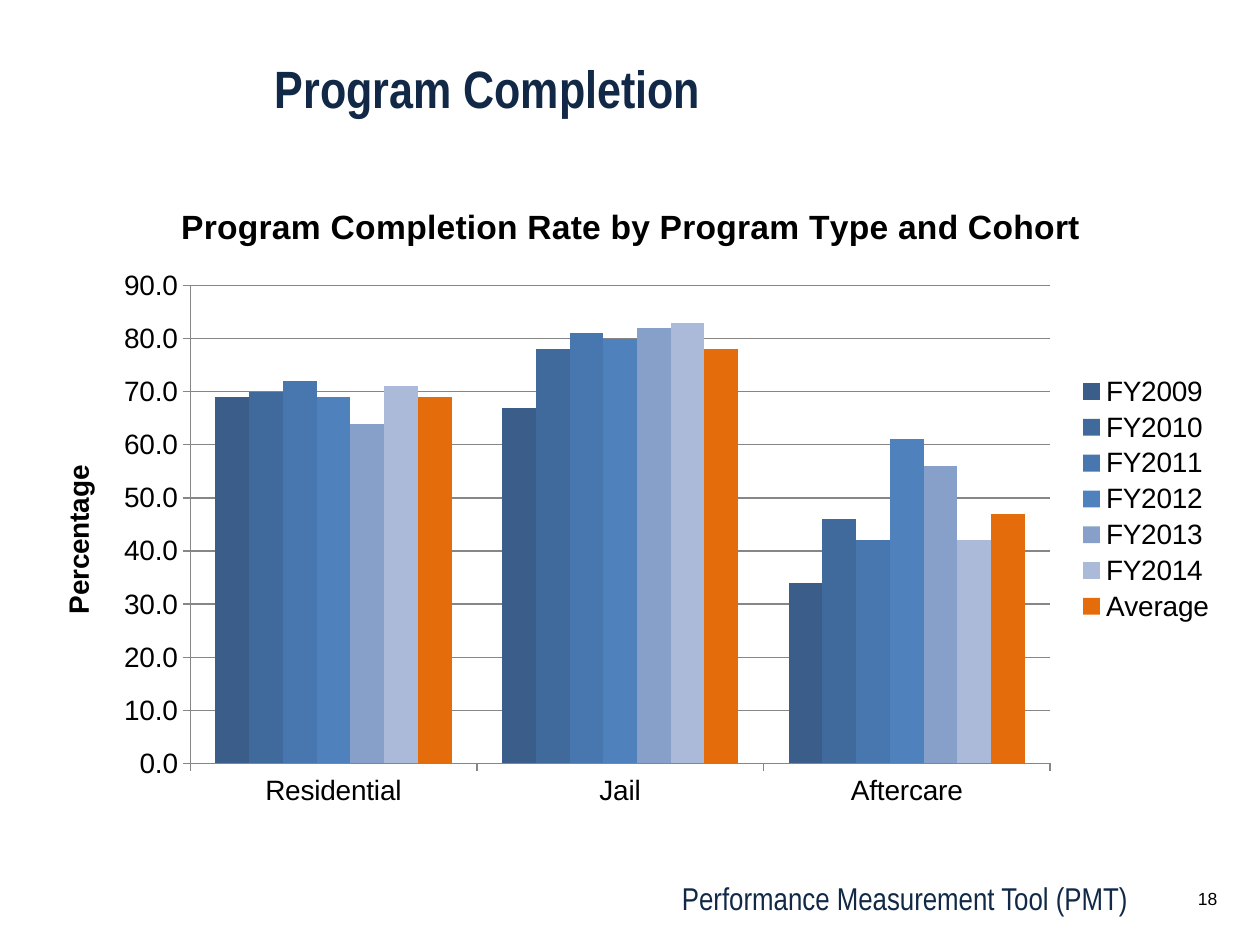
from dataclasses import dataclass
from typing import Optional

from lxml.etree import SubElement
from pptx import Presentation
from pptx.chart.data import CategoryChartData
from pptx.dml.color import RGBColor
from pptx.enum.chart import XL_CHART_TYPE as ChartType, XL_LEGEND_POSITION as LegendPos
from pptx.enum.chart import XL_TICK_MARK as Tick
from pptx.enum.text import MSO_ANCHOR as Anchor, PP_ALIGN as Align
from pptx.oxml import parse_xml
from pptx.oxml.ns import nsdecls, qn
from pptx.util import Inches, Pt

NAVY = RGBColor(0x11, 0x29, 0x47)
BLACK = RGBColor(0, 0, 0)
GRAY = RGBColor(0x86, 0x86, 0x86)
COLUMNS, ROWS = 100, 75
WIDTH, HEIGHT = Inches(10), Inches(7.5)


@dataclass(frozen=True)
class Area:
    column: float
    row: float
    columns: float
    rows: float

    def place(self) -> tuple[int, int, int, int]:
        across, down = WIDTH / COLUMNS, HEIGHT / ROWS
        return (round(self.column * across), round(self.row * down),
                round(self.columns * across), round(self.rows * down))

    def shares_of(self, outer: "Area") -> dict[str, float]:
        return {"x": (self.column - outer.column) / outer.columns,
                "y": (self.row - outer.row) / outer.rows,
                "w": self.columns / outer.columns,
                "h": self.rows / outer.rows}


@dataclass(frozen=True)
class Cohort:
    name: str
    rates: tuple[int, int, int]
    color: RGBColor


CHART_AREA = Area(2.5, 14.2, 95, 50.8)
PLOT_AREA = Area(15.1, 22.66, 68.25, 37.94)
PROGRAMS = ("Residential", "Jail", "Aftercare")
COHORTS = (
    Cohort("FY2009", (69, 67, 34), RGBColor(0x3A, 0x5D, 0x8A)),
    Cohort("FY2010", (70, 78, 46), RGBColor(0x40, 0x69, 0x9C)),
    Cohort("FY2011", (72, 81, 42), RGBColor(0x48, 0x76, 0xAE)),
    Cohort("FY2012", (69, 80, 61), RGBColor(0x4F, 0x81, 0xBD)),
    Cohort("FY2013", (64, 82, 56), RGBColor(0x87, 0xA0, 0xCA)),
    Cohort("FY2014", (71, 83, 42), RGBColor(0xAB, 0xBA, 0xD9)),
    Cohort("Average", (69, 78, 47), RGBColor(0xE4, 0x6C, 0x0A)),
)


def add_text(slide, text: str, area: Area, *, size: float, font: str = "Arial Narrow",
             color: RGBColor = NAVY, bold: bool = False, align: Align = Align.LEFT,
             anchor: Anchor = Anchor.TOP, wrap: bool = True,
             line_spacing: Optional[Pt] = None) -> None:
    frame = slide.shapes.add_textbox(*area.place()).text_frame
    frame.word_wrap = wrap
    frame.vertical_anchor = anchor
    paragraph = frame.paragraphs[0]
    paragraph.alignment = align
    paragraph.line_spacing = line_spacing
    run = paragraph.add_run()
    run.text = text
    style_font(run.font, size, font, color, bold)


def style_font(font, size: float, name: str = "Arial",
               color: RGBColor = BLACK, bold: bool = False) -> None:
    font.size, font.name, font.bold = Pt(size), name, bold
    font.color.rgb = color


def set_layout(part, **shares: float) -> None:
    layout = part.find(qn("c:layout"))
    if layout is None:
        layout = parse_xml(f"<c:layout {nsdecls('c')}/>")
        part.insert(0, layout)
    manual = SubElement(layout, qn("c:manualLayout"))
    if "w" in shares:
        SubElement(manual, qn("c:layoutTarget")).set("val", "inner")
    for mode in ("xMode", "yMode"):
        SubElement(manual, qn(f"c:{mode}")).set("val", "edge")
    for side, share in shares.items():
        SubElement(manual, qn(f"c:{side}")).set("val", str(share))


def add_heading(heading, text: str, size: float, x: float, y: float) -> None:
    heading.text_frame.text = text
    style_font(heading.text_frame.paragraphs[0].runs[0].font, size, bold=True)
    set_layout(heading._element, x=x, y=y)


def add_completion_chart(slide) -> None:
    data = CategoryChartData(number_format="0.0")
    data.categories = PROGRAMS
    for cohort in COHORTS:
        data.add_series(cohort.name, cohort.rates)
    chart = slide.shapes.add_chart(
        ChartType.COLUMN_CLUSTERED, *CHART_AREA.place(), data).chart
    style_font(chart.font, 16)
    add_heading(chart.chart_title, "Program Completion Rate by Program Type and Cohort",
                19.2, 0.12, 0.03)

    columns = chart.plots[0]
    columns.gap_width, columns.overlap = 150, 0
    columns.vary_by_categories = False
    for series, cohort in zip(columns.series, COHORTS):
        series.format.fill.solid()
        series.format.fill.fore_color.rgb = cohort.color
    set_layout(chart._chartSpace.chart.plotArea, **PLOT_AREA.shares_of(CHART_AREA))

    rates = chart.value_axis
    rates.minimum_scale, rates.maximum_scale, rates.major_unit = 0, 90, 10
    rates.has_major_gridlines = True
    rates.tick_labels.number_format = "0.0"
    rates.tick_labels.number_format_is_linked = False
    add_heading(rates.axis_title, "Percentage", 16, 0.02, 0.44)
    for axis in (rates, chart.category_axis):
        axis.major_tick_mark, axis.minor_tick_mark = Tick.OUTSIDE, Tick.NONE
    for guide in (rates, chart.category_axis, rates.major_gridlines):
        guide.format.line.color.rgb = GRAY
        guide.format.line.width = Pt(0.75)

    chart.has_legend = True
    chart.legend.position = LegendPos.RIGHT
    chart.legend.include_in_layout = False
    style_font(chart.legend.font, 16)


def main() -> None:
    deck = Presentation()
    deck.slide_width, deck.slide_height = WIDTH, HEIGHT
    slide = deck.slides.add_slide(deck.slide_layouts[6])
    add_text(slide, "Performance Measurement Tool (PMT)", Area(41.7, 69.3, 48.8, 4),
             size=18, align=Align.RIGHT)
    add_text(slide, "Program Completion", Area(20.83, 4.95, 70.8, 5), size=30, bold=True,
             anchor=Anchor.BOTTOM, line_spacing=Pt(31))
    add_text(slide, "18", Area(93.9, 70, 3.7, 2.7), size=10, font="Arial", color=BLACK,
             align=Align.RIGHT, wrap=False)
    add_completion_chart(slide)
    deck.save("out.pptx")


if __name__ == "__main__":
    main()
